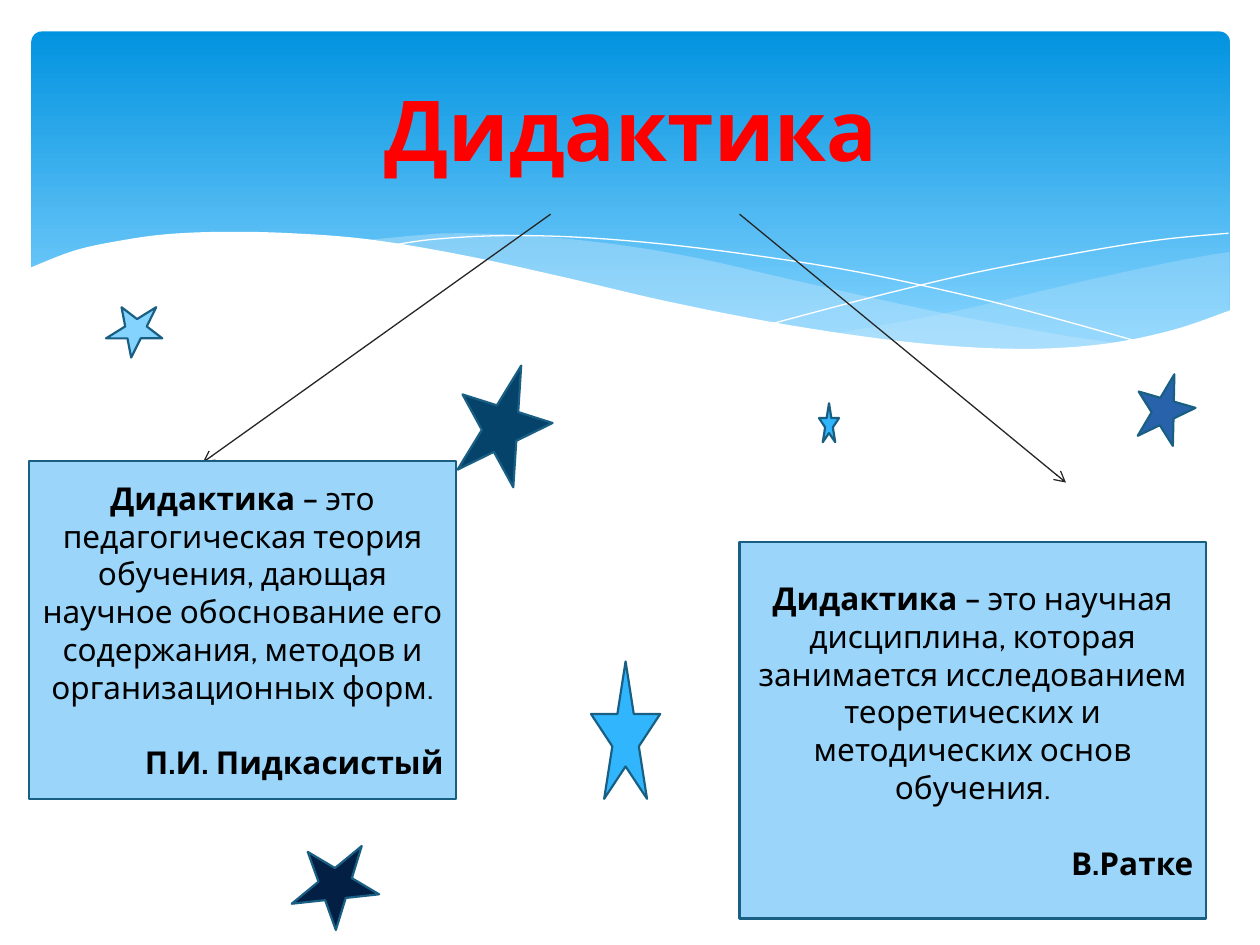
from lxml.etree import SubElement
from pptx import Presentation
from pptx.dml.color import RGBColor
from pptx.enum.shapes import MSO_CONNECTOR, MSO_SHAPE
from pptx.enum.text import MSO_ANCHOR, PP_ALIGN
from pptx.oxml.ns import qn
from pptx.util import Inches, Pt

W, H = Inches(10), Inches(7.5)
COL, ROW = W / 100, H / 75
FONT = "Cabin"

WHITE = RGBColor(0xFF, 0xFF, 0xFF)
BLACK = RGBColor(0, 0, 0)
RED = RGBColor(0xFF, 0, 0)
INK = RGBColor(0x26, 0x26, 0x26)
EDGE = RGBColor(0x19, 0x5F, 0x84)
CARD = RGBColor(0x9B, 0xD5, 0xFA)
MIST = RGBColor(0xC6, 0xE7, 0xFC)
AZURE = RGBColor(0x02, 0x93, 0xE0)
SKY = RGBColor(0x83, 0xD3, 0xFE)
BRIGHT = RGBColor(0x31, 0xB6, 0xFD)
TEAL = RGBColor(0x06, 0x43, 0x6B)
BLUE = RGBColor(0x28, 0x62, 0xAA)
NAVY = RGBColor(0x04, 0x1F, 0x44)

RIGHT_SWELL = [
    [(100, 64.8), (95.7, 67.4), (87.9, 73.3), (76.6, 82.6), (66.9, 88.9)],
    [(66.9, 88.9), (74.3, 92.2), (81.8, 93.7), (89.1, 92.2), (95, 88.1), (100, 82.2)],
]
LEFT_SWELL = [
    [(27.4, 61.5), (31.9, 60), (35.3, 59.3), (41.5, 60), (48.8, 62.6),
     (55.7, 66.7), (63.5, 73), (75.3, 82.2), (85.4, 88.9), (91.3, 91.9)],
    [(91.3, 91.9), (86.5, 93.3), (81.1, 93.7), (74.8, 92.6), (65.7, 88.5),
     (56.9, 82.6), (44.6, 73), (37.6, 67.4), (33.3, 64.4), (27.4, 61.5)],
]
FALLING_LINE = [
    [(29.9, 63), (33.5, 61.1), (39.5, 60), (46.7, 60.7), (55.8, 63.7),
     (67.3, 69.6), (77.3, 77), (84.8, 83.7), (92.7, 91.5)],
]
RISING_LINE = [
    [(61.8, 85.9), (70.5, 77.8), (79, 70.7), (88.4, 64.4), (94.5, 61.1), (99.9, 59.3)],
]
FOREGROUND = [
    [(100.1, 81.9), (95.2, 87.8), (89.4, 91.9), (82.4, 93.3), (73.7, 91.5), (63.2, 86.3),
     (53, 79.3), (44.4, 72.2), (35.8, 65.6), (28.1, 61.1), (21.6, 59.3), (16, 58.9),
     (11.3, 59.6), (7.4, 61.5), (3.6, 64.4), (-0.2, 69.6)],
    [(-0.2, 112.6), (100.1, 112.6)],
]


def place(box):
    """Turn a box in columns and rows into slide lengths."""
    x, y, w, h = box
    return round(x * COL), round(y * ROW), round(w * COL), round(h * ROW)


def add_text(p, text, size=18, color=BLACK, bold=False, align=PP_ALIGN.CENTER):
    """Append a formatted run to a paragraph."""
    p.alignment = align
    r = p.add_run()
    r.text = text
    r.font.name, r.font.size, r.font.bold = FONT, Pt(size), bold
    r.font.color.rgb = color


def add_block(s, kind, box, fill, rotation=0):
    """Add an outlined preset shape."""
    sp = s.shapes.add_shape(kind, *place(box))
    sp.shadow.inherit = False
    sp.fill.solid()
    sp.fill.fore_color.rgb = fill
    sp.line.color.rgb = EDGE
    sp.line.width = Pt(1.25)
    sp.rotation = rotation
    return sp


def smooth_run(knots, steps=6):
    """Sample a Catmull-Rom curve through the knots."""
    if len(knots) < 3:
        return knots
    padded = [knots[0], *knots, knots[-1]]
    points = [knots[0]]
    for quad in zip(padded, padded[1:], padded[2:], padded[3:]):
        for i in range(1, steps + 1):
            t = i / steps
            points.append(tuple(
                b + t * (c - a) / 2 + t**2 * (a - 2.5 * b + 2 * c - d / 2)
                + t**3 * (1.5 * (b - c) + (d - a) / 2)
                for a, b, c, d in zip(*quad)))
    return points


def add_wave(s, box, runs, fill=None, alpha=100):
    """Draw a filled wave, or a white hairline when no fill is given."""
    x, y, w, h = place(box)
    start, *rest = [(round(x + w * px / 100), round(y + h * py / 100))
                    for run in runs for px, py in smooth_run(run)]
    builder = s.shapes.build_freeform(*start, scale=1.0)
    builder.add_line_segments(rest, close=fill is not None)
    sp = builder.convert_to_shape()
    sp.shadow.inherit = False
    if fill is None:
        sp.fill.background()
        sp.line.color.rgb = WHITE
        sp.line.width = Pt(0)
        return
    sp.line.fill.background()
    sp.fill.solid()
    sp.fill.fore_color.rgb = fill
    color = sp.fill._xPr.find(".//" + qn("a:srgbClr"))
    SubElement(color, qn("a:alpha"), val=str(alpha * 1000))


def add_banner(s, box):
    """Draw the gradient panel and the waves that cut its lower edge."""
    sp = s.shapes.add_shape(MSO_SHAPE.ROUNDED_RECTANGLE, *place(box))
    sp.adjustments[0] = 0.03
    sp.shadow.inherit = False
    sp.line.fill.background()
    sp.fill.gradient()
    sp.fill.gradient_angle = 270
    for stop, position, color in zip(sp.fill.gradient_stops, (0, 0.9), (AZURE, SKY)):
        stop.position = position
        stop.color.rgb = color
    add_wave(s, box, RIGHT_SWELL, MIST, 29)
    add_wave(s, box, LEFT_SWELL, MIST, 40)
    add_wave(s, box, FALLING_LINE)
    add_wave(s, box, RISING_LINE)
    add_wave(s, box, FOREGROUND, WHITE)


def add_title(s, box, text):
    """Place the slide title."""
    tf = s.shapes.add_textbox(*place(box)).text_frame
    tf.word_wrap = True
    tf.vertical_anchor = MSO_ANCHOR.MIDDLE
    add_text(tf.paragraphs[0], text, size=48, color=RED, bold=True)


def add_arrow(s, x1, y1, x2, y2):
    """Draw an arrow between two grid points."""
    ends = round(x1 * COL), round(y1 * ROW), round(x2 * COL), round(y2 * ROW)
    line = s.shapes.add_connector(MSO_CONNECTOR.STRAIGHT, *ends)
    line.line.color.rgb = INK
    line.line.width = Pt(0.75)
    SubElement(line.line._get_or_add_ln(), qn("a:tailEnd"), type="arrow")
    SubElement(line._element.spPr, qn("a:effectLst"))


def add_definition(s, box, term, meaning, author):
    """Place a definition card signed by its author."""
    tf = add_block(s, MSO_SHAPE.RECTANGLE, box, CARD).text_frame
    tf.word_wrap = True
    tf.vertical_anchor = MSO_ANCHOR.MIDDLE
    add_text(tf.paragraphs[0], term, bold=True)
    add_text(tf.paragraphs[0], meaning)
    p = tf.add_paragraph()
    p.space_before = Pt(21.6)
    add_text(p, author, bold=True, align=PP_ALIGN.RIGHT)


def main():
    """Build and save the slide."""
    prs = Presentation()
    prs.slide_width, prs.slide_height = W, H
    s = prs.slides.add_slide(prs.slide_layouts[6])
    add_banner(s, (2.5, 2.5, 95.1, 27))
    add_title(s, (5.1, 3.3, 90, 13.7), "Дидактика")
    add_arrow(s, 43.7, 17, 16.1, 36.7)
    add_arrow(s, 58.7, 17, 84.6, 38.3)
    add_definition(
        s, (2.3, 36.6, 33.9, 26.8), "Дидактика",
        " – это педагогическая теория обучения, дающая научное обоснование"
        " его содержания, методов и организационных форм.", "П.И. Пидкасистый")
    add_definition(
        s, (58.7, 43, 37, 29.9), "Дидактика",
        " – это научная дисциплина, которая занимается исследованием"
        " теоретических и методических основ обучения.", "В.Ратке")
    for box, fill, rotation in [
        ((36.2, 28.8, 7.5, 9.4), TEAL, 17.6),
        ((46.9, 52.5, 5.5, 10.9), BRIGHT, 0),
        ((65, 32, 1.6, 3.1), BRIGHT, 0),
        ((8.3, 24.1, 4.7, 3.8), SKY, 328.2),
        ((90.1, 29.6, 4.7, 5.5), BLUE, 16),
        ((22.8, 66.9, 7.2, 6.2), NAVY, 320.5),
    ]:
        add_block(s, MSO_SHAPE.STAR_5_POINT, box, fill, rotation)
    prs.save("out.pptx")


if __name__ == "__main__":
    main()
